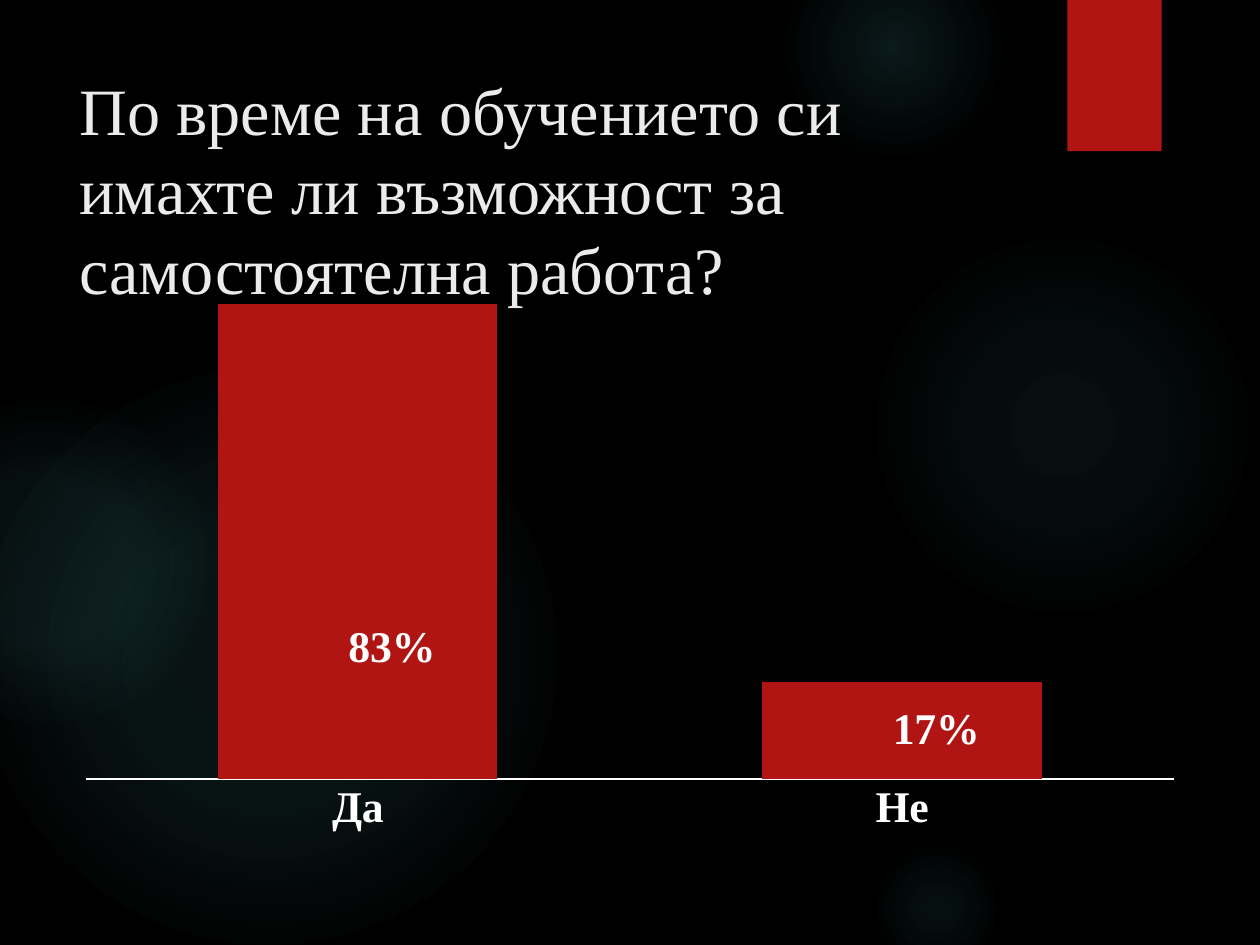
from dataclasses import dataclass

from lxml import etree
from pptx import Presentation
from pptx import util as u
from pptx.chart.data import CategoryChartData
from pptx.dml.color import RGBColor
from pptx.enum import chart as charts, shapes, text
from pptx.oxml import parse_xml
from pptx.oxml.ns import nsdecls, qn

BLACK = RGBColor(0x00, 0x00, 0x00)
WHITE = RGBColor(0xFF, 0xFF, 0xFF)
OFF_WHITE = RGBColor(0xEB, 0xEB, 0xEB)
RED = RGBColor(0xB0, 0x15, 0x13)
TEAL = RGBColor(0x50, 0xB9, 0xC1)
SERIF = "Times New Roman"
SANS = "TeX Gyre Adventor"


@dataclass
class Glow:
    """A soft circle: lengths in cm, opacities and fade point in percent."""
    left: float
    top: float
    size: float
    centre: int
    middle: int
    fade: int


@dataclass
class Answer:
    """A bar, with its label's shift as a fraction of the chart size."""
    name: str
    share: float
    shift_x: float
    shift_y: float


GLOWS = [
    Glow(17.5, 4.66, 7.82, 7, 6, 69),
    Glow(15.8, -1.27, 4.44, 14, 7, 73),
    Glow(17.5, 16.93, 2.75, 9, 5, 66),
    Glow(-0.42, 7.41, 11.64, 11, 10, 75),
    Glow(-2.33, 8.04, 6.56, 8, 8, 72),
]
ANSWERS = [Answer("Да", 0.83, 0.03, 0.18), Answer("Не", 0.17, 0.03, 0)]


def add_plain_shape(page, kind, left: float, top: float, width: float, height: float):
    shape = page.shapes.add_shape(kind, u.Cm(left), u.Cm(top), u.Cm(width), u.Cm(height))
    shape.shadow.inherit = False
    shape.line.fill.background()
    return shape


def add_glow(page, glow: Glow) -> None:
    shape = add_plain_shape(page, shapes.MSO_SHAPE.OVAL, glow.left, glow.top, glow.size, glow.size)
    stops = "".join(
        f'<a:gs pos="{place * 1000}"><a:srgbClr val="{TEAL}">'
        f'<a:alpha val="{alpha * 1000}"/></a:srgbClr></a:gs>'
        for place, alpha in [(0, glow.centre), (36, glow.middle), (glow.fade, 0)]
    )
    gradient = parse_xml(
        f'<a:gradFill {nsdecls("a")} rotWithShape="1"><a:gsLst>{stops}</a:gsLst>'
        '<a:path path="circle"><a:fillToRect l="50000" t="50000" r="50000" b="50000"/>'
        "</a:path></a:gradFill>"
    )
    shape._element.spPr.find(qn("a:prstGeom")).addnext(gradient)


def add_ribbon(page) -> None:
    ribbon = add_plain_shape(page, shapes.MSO_SHAPE.RECTANGLE, 21.52, 0, 1.9, 3.05)
    ribbon.fill.solid()
    ribbon.fill.fore_color.rgb = RED
    ribbon._element.spPr.find(qn("a:effectLst")).append(parse_xml(
        f'<a:outerShdw {nsdecls("a")} blurRad="{u.Pt(3)}" dist="{u.Pt(2)}" dir="5400000">'
        f'<a:srgbClr val="{BLACK}"><a:alpha val="45000"/></a:srgbClr></a:outerShdw>'
    ))


def add_title(page, words: str) -> None:
    box = page.shapes.add_textbox(u.Cm(1.35), u.Cm(1.27), u.Cm(19.6), u.Cm(3.89))
    frame = box.text_frame
    frame.word_wrap = True
    frame.vertical_anchor = text.MSO_ANCHOR.TOP
    span = frame.paragraphs[0].add_run()
    span.text = words
    span.font.size = u.Pt(37.8)
    span.font.name = SERIF
    span.font.color.rgb = OFF_WHITE


def style_font(font, size: float, name: str, bold: bool) -> None:
    font.size = u.Pt(size)
    font.name = name
    font.bold = bold
    font.color.rgb = WHITE


def manual_layout(**settings):
    """Build a c:layout from its settings, given in schema order."""
    layout = parse_xml(f'<c:layout {nsdecls("c")}><c:manualLayout/></c:layout>')
    for tag, value in settings.items():
        etree.SubElement(layout[0], qn(f"c:{tag}")).set("val", str(value))
    return layout


def hide_leader_lines(series) -> None:
    """Turn leader lines off, in both the basic and the 2013 setting."""
    labels = series._element.find(qn("c:dLbls"))
    for setting in labels.findall(qn("c:showLeaderLines")):
        setting.set("val", "0")
    labels.append(parse_xml(
        f'<c:extLst {nsdecls("c")}><c:ext uri="{{CE6537A1-D6FC-4f65-9D91-7224C49458BB}}" '
        'xmlns:c15="http://schemas.microsoft.com/office/drawing/2012/chart">'
        '<c15:showLeaderLines val="0"/></c:ext></c:extLst>'
    ))


def add_answer_chart(page, answers: list[Answer]) -> None:
    data = CategoryChartData(number_format="0%")
    data.categories = [answer.name for answer in answers]
    data.add_series("Series 1", [answer.share for answer in answers])
    chart = page.shapes.add_chart(
        charts.XL_CHART_TYPE.COLUMN_STACKED,
        u.Cm(1.27), u.Cm(5.08), u.Cm(22.86), u.Cm(11.94), data,
    ).chart
    chart.has_legend = False
    chart.has_title = False
    style_font(chart.font, 18, SANS, False)

    values = chart.value_axis
    values.visible = False
    values.has_major_gridlines = False
    values.minimum_scale = 0
    values.maximum_scale = 0.9

    names = chart.category_axis
    names.major_tick_mark = charts.XL_TICK_MARK.NONE
    names.format.line.color.rgb = WHITE
    names.format.line.width = u.Pt(1.25)
    style_font(names.tick_labels.font, 25, SERIF, True)

    plot = chart.plots[0]
    plot.gap_width = 95
    plot.overlap = 100
    plot.vary_by_categories = False
    series = plot.series[0]
    series.format.fill.solid()
    series.format.fill.fore_color.rgb = RED
    labels = series.data_labels
    labels.show_value = True
    labels.number_format = "0%"
    labels.number_format_is_linked = False
    style_font(labels.font, 25, SERIF, True)
    for index, answer in enumerate(answers):
        label = series.points[index].data_label
        label.position = charts.XL_LABEL_POSITION.CENTER
        style_font(label.font, 25, SERIF, True)
        place = series._element.find(f'.//{qn("c:dLbl")}[{index + 1}]/{qn("c:idx")}')
        place.addnext(manual_layout(x=answer.shift_x, y=answer.shift_y))
    hide_leader_lines(series)

    area = chart._chartSpace.chart.plotArea
    for layout in area.findall(qn("c:layout")):
        area.remove(layout)
    area.insert(0, manual_layout(
        layoutTarget="inner", xMode="edge", yMode="edge", x=0.02, y=0.02, w=0.96, h=0.87,
    ))


def main() -> None:
    deck = Presentation()
    deck.slide_width, deck.slide_height = u.Cm(25.4), u.Cm(19.05)
    page = deck.slides.add_slide(deck.slide_layouts[6])
    page.background.fill.solid()
    page.background.fill.fore_color.rgb = BLACK
    for glow in GLOWS:
        add_glow(page, glow)
    add_ribbon(page)
    add_title(page, "По време на обучението си имахте ли възможност за самостоятелна работа?")
    add_answer_chart(page, ANSWERS)
    deck.save("out.pptx")


if __name__ == "__main__":
    main()
